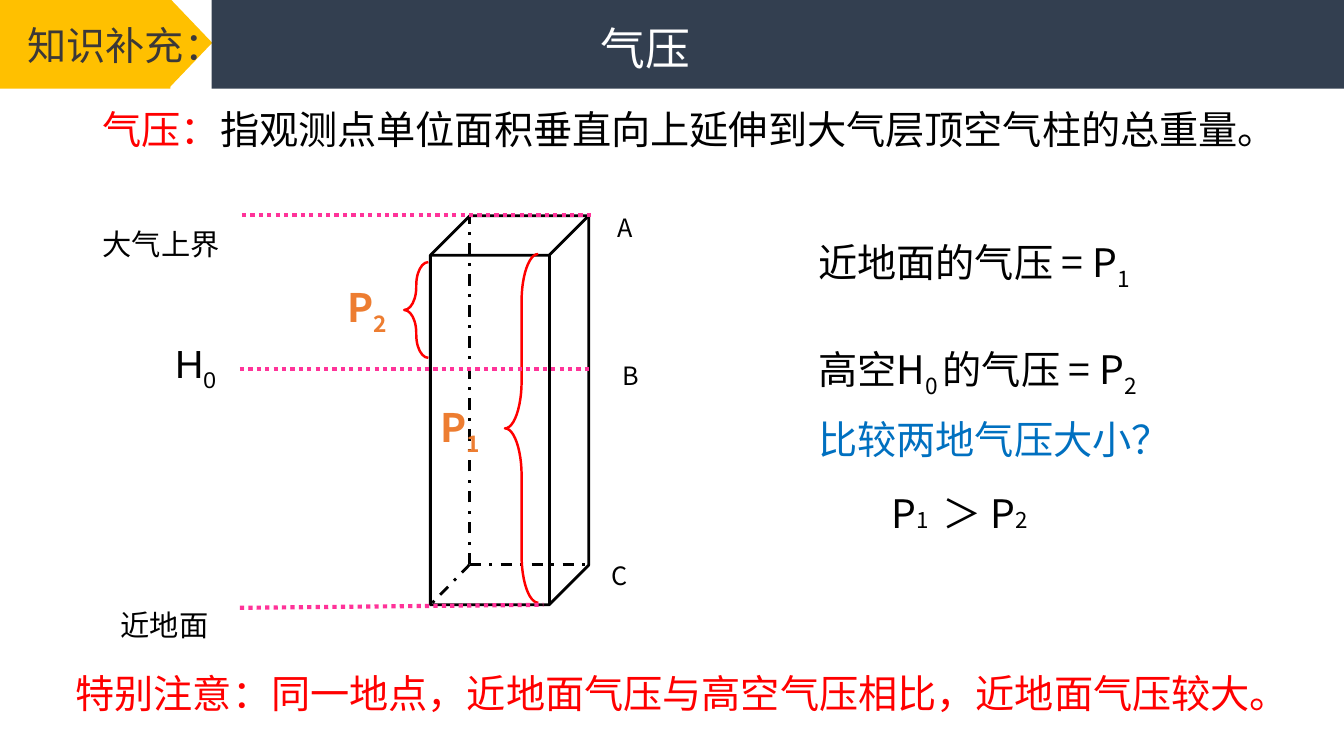
"""Builds a slide that explains air pressure with a column of air."""
from lxml import etree
from pptx import Presentation
from pptx.dml.color import RGBColor
from pptx.enum.dml import MSO_LINE
from pptx.enum.shapes import MSO_CONNECTOR, MSO_SHAPE
from pptx.enum.text import MSO_ANCHOR, MSO_AUTO_SIZE, PP_ALIGN
from pptx.oxml.ns import qn
from pptx.util import Inches, Pt

RECTANGLE, TRIANGLE = MSO_SHAPE.RECTANGLE, MSO_SHAPE.ISOSCELES_TRIANGLE
CUBE, BRACE = MSO_SHAPE.CUBE, MSO_SHAPE.LEFT_BRACE
DASH_DOT, DOTTED = MSO_LINE.DASH_DOT, MSO_LINE.ROUND_DOT
STRAIGHT = MSO_CONNECTOR.STRAIGHT
LEFT, CENTER, TOP = PP_ALIGN.LEFT, PP_ALIGN.CENTER, MSO_ANCHOR.TOP
FIT, FIXED = MSO_AUTO_SIZE.SHAPE_TO_FIT_TEXT, MSO_AUTO_SIZE.NONE

COLORS = {
    "gold": "FFC000", "navy": "333F50", "gray": "3B3838", "white": "FFFFFF",
    "black": "000000", "red": "FF0000", "orange": "ED7D31", "pink": "FF3399",
    "blue": "0070C0",
}
FONT = "Noto Sans CJK SC"
CELLS_PER_INCH = 10
WIDTH, HEIGHT = 133.33, 75


def cells(count):
    """Turns grid columns or rows into a length."""
    return Inches(count / CELLS_PER_INCH)


def color(name):
    """Looks up a named colour."""
    return RGBColor.from_string(COLORS[name])


class Slide:
    """Holds the page and draws styled elements on its grid."""

    def __init__(self, deck):
        """Adds a title-only page."""
        self.page = deck.slides.add_slide(deck.slide_layouts[5])
        self.shapes = self.page.shapes

    def shape(self, kind, area, fill=None, line=None, weight=2, adjust=None, turn=0):
        """Draws a preset shape."""
        box = self.shapes.add_shape(kind, *map(cells, area))
        box.shadow.inherit = False
        box.rotation = turn
        if adjust is not None:
            box.adjustments[0] = adjust
        if fill:
            box.fill.solid()
            box.fill.fore_color.rgb = color(fill)
        else:
            box.fill.background()
        if line:
            box.line.color.rgb = color(line)
            box.line.width = Pt(weight)
        else:
            box.line.fill.background()
        return box

    def line(self, start, end, name, weight, dash):
        """Draws a dashed straight line."""
        rule = self.shapes.add_connector(STRAIGHT, *map(cells, start + end))
        rule.line.color.rgb = color(name)
        rule.line.width = Pt(weight)
        rule.line.dash_style = dash
        etree.SubElement(rule._element.spPr, qn("a:effectLst"))

    def span(self, para, text, size=28, name="black", bold=False, font=FONT, low=False):
        """Adds one run, lowered if it is a subscript."""
        span = para.add_run()
        span.text = text
        span.font.size = Pt(size)
        span.font.bold = bold
        span.font.color.rgb = color(name)
        span.font.name = font
        properties = span._r.get_or_add_rPr()
        etree.SubElement(properties, qn("a:ea")).set("typeface", font)
        if low:
            properties.set("baseline", "-25000")

    def text(self, area, spans, align=LEFT, wrap=True, **style):
        """Writes a text box from (text, changes) pairs."""
        box = self.shapes.add_textbox(*map(cells, area))
        frame = box.text_frame
        frame.word_wrap = wrap
        frame.auto_size = FIT
        para = frame.paragraphs[0]
        para.alignment = align
        self.spans(para, spans, **style)
        return frame

    def spans(self, para, spans, **style):
        """Fills a paragraph run by run."""
        for text, changes in spans:
            self.span(para, text, **{**style, **changes})

    def title(self, area, text, backdrop):
        """Places the title in front of its backdrop."""
        title = self.shapes.title
        title.left, title.top, title.width, title.height = map(cells, area)
        frame = title.text_frame
        frame.auto_size = FIXED
        frame.vertical_anchor = TOP
        frame.paragraphs[0].alignment = LEFT
        self.span(frame.paragraphs[0], text, size=32, name="white")
        backdrop._element.addnext(title._element)


def draw_header(slide):
    """Draws the tag, the bar and the title."""
    slide.shape(RECTANGLE, (-0.1, -0.2, 17, 9), "gold")
    slide.shape(TRIANGLE, (14.4, 2.1, 9, 4.3), "gold", turn=90)
    slide.text((0, 1.6, 21, 5.7), [("知识补充：", {})], CENTER, name="gray")
    bar = slide.shape(RECTANGLE, (21, -0.2, 112.33, 9), "navy")
    slide.title((58.6, 1.6, 19.6, 6.4), "气压", bar)
    slide.text((9.2, 10, 116.8, 5.7), [
        ("气压：", {"name": "red"}),
        ("指观测点单位面积垂直向上延伸到大气层顶空气柱的总重量。", {}),
    ])


def draw_column(slide):
    """Draws the air column with its levels and labels."""
    slide.shape(CUBE, (42.7, 21.4, 15.7, 38.6), line="black", adjust=0.25)
    corner = (46.6, 56)
    for end in ((58.4, 56), (46.6, 21.4), (42.7, 60)):
        slide.line(corner, end, "black", 2, DASH_DOT)
    for area, adjust in (((50.1, 25.2, 3.3, 34.6), 1.43), ((40.1, 26, 2.4, 9.5), 0.95)):
        slide.shape(BRACE, area, line="red", weight=1.75, adjust=adjust)
    for start, end in (
        ((23.8, 36.6), (58.4, 36.6)),
        ((23.8, 60.3), (53.9, 60)),
        ((24, 21.3), (58.6, 21.3)),
    ):
        slide.line(start, end, "pink", 3, DOTTED)
    for area, letter, index, style in (
        ((42.7, 39.5, 7.4, 5.8), "P", "1", {"name": "orange", "bold": True}),
        ((33.5, 27.6, 6.6, 5.8), "P", "2", {"name": "orange", "bold": True}),
        ((16.4, 33.2, 6.6, 5.7), "H", "0", {"font": "Arial"}),
    ):
        slide.text(area, [(letter, {}), (index, {"low": True})], **style)
    for area, level in (((11, 56.4, 15.7, 5), "近地面"), ((9.2, 18.6, 19, 5), "大气上界")):
        slide.text(area, [(level, {})], size=36, low=True)
    for left, top, point in ((60.3, 20.6, "A"), (60.8, 35.3, "B"), (59.7, 55.1, "C")):
        slide.text((left, top, 3.6, 4), [(point, {})], wrap=False, size=18)


def draw_reasoning(slide):
    """Writes the comparison and the conclusion."""
    low, small = {"low": True}, {"size": 16}
    frame = slide.text((80.2, 23.2, 37.6, 13.6), [("近地面的气压 = P", {}), ("1", low)])
    para = frame.add_paragraph()
    para.space_before = Pt(38)
    slide.spans(para, [("高空H", {}), ("0 ", low), ("的气压 = P", {}), ("2", low)])
    slide.text((80.2, 40.7, 34.2, 5.7), [("比较两地气压大小？", {})], name="blue")
    slide.text((87.5, 48.1, 40, 5.7), [("P", {}), ("1 ", small), (" ＞ P", {}), ("2", small)])
    slide.text((6.5, 65.9, 119.5, 5.7), [
        ("特别注意：同一地点，近地面气压与高空气压相比，近地面气压较大。", {}),
    ], name="red")


def main():
    """Builds and saves the deck."""
    deck = Presentation()
    deck.slide_width, deck.slide_height = cells(WIDTH), cells(HEIGHT)
    slide = Slide(deck)
    draw_header(slide)
    draw_column(slide)
    draw_reasoning(slide)
    deck.save("out.pptx")


if __name__ == "__main__":
    main()
